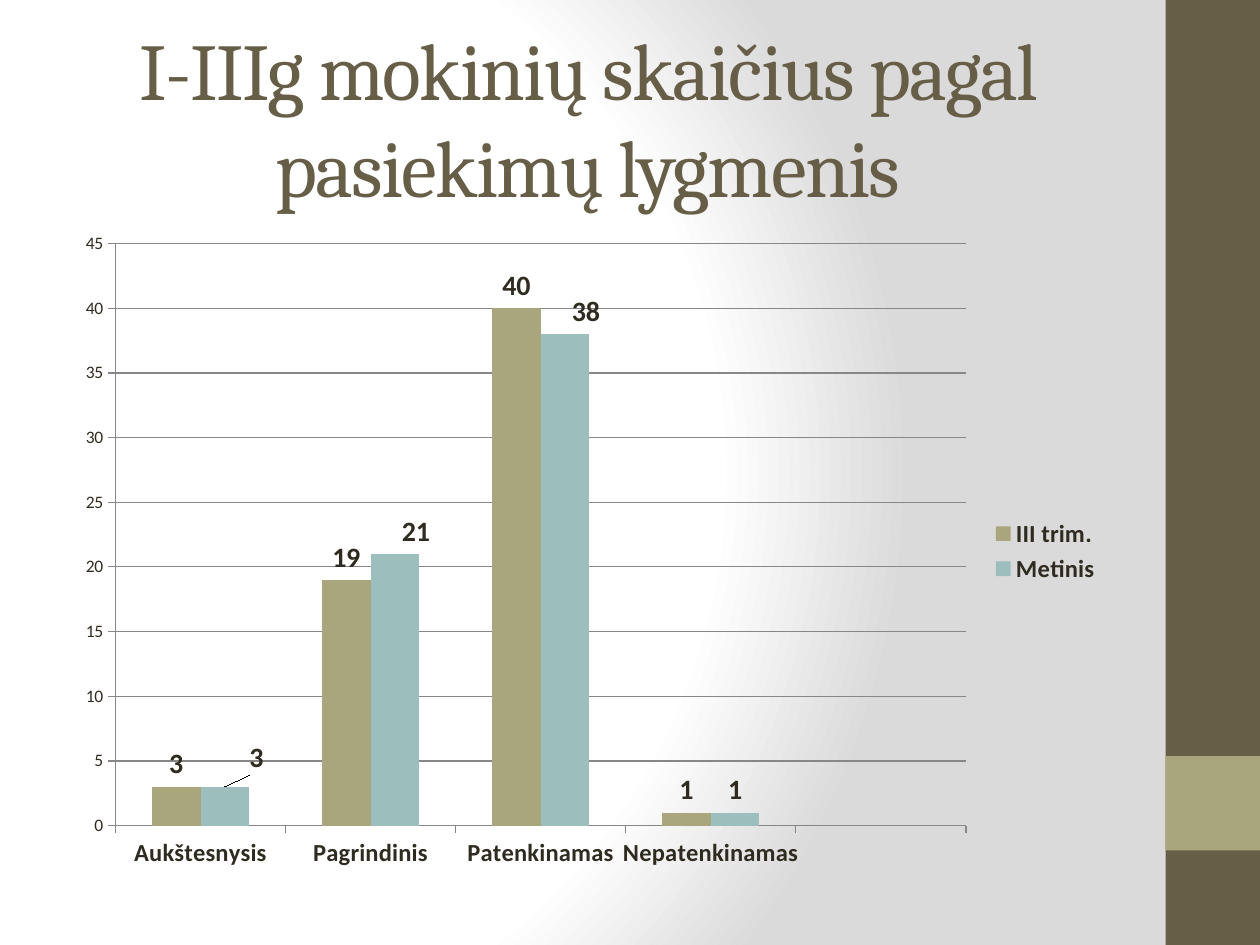
from lxml.etree import SubElement
from pptx import Presentation
from pptx.chart.data import CategoryChartData
from pptx.dml.color import RGBColor
from pptx.enum.chart import XL_CHART_TYPE as ChartType, XL_LABEL_POSITION as LabelPos
from pptx.enum.chart import XL_LEGEND_POSITION as LegendPos, XL_TICK_MARK as Tick
from pptx.enum.shapes import MSO_SHAPE as Shape
from pptx.enum.text import MSO_ANCHOR as Anchor, MSO_AUTO_SIZE as AutoSize, PP_ALIGN as Align
from pptx.oxml import parse_xml
from pptx.oxml.ns import nsdecls, qn
from pptx.util import Pt

# Content
TITLE = "I-IIIg mokinių skaičius pagal pasiekimų lygmenis"
LEVELS = ["Aukštesnysis", "Pagrindinis", "Patenkinamas", "Nepatenkinamas", ""]
PERIODS = {
    "III trim.": [3, 19, 40, 1, None],
    "Metinis": [3, 21, 38, 1, None],
}
# Label shifts in the yearly series, as shares of the chart: point -> (x, y)
LABEL_SHIFTS = {0: (0.03, -0.01), 1: (0.02, 0), 2: (0.02, 0)}

THEME = {
    "brown": "675E47", "olive": "A9A57C", "teal": "9CBEBD",
    "text": "2F2B20", "line": "878787",
    "heading": "Cambria", "body": "Calibri",
    "title": 46, "label": 16, "legend": 14, "axis": 10,
}
BACKDROP = [(0, "FFFFFF"), (75, "FFFFFF"), (100, "DADADA")]
WIDTH, HEIGHT, BAND = 720, 540, 54
MARGIN, CONTENT = 36, 600
PLOT = {"x": 0.05, "y": 0.035, "w": 0.81, "h": 0.88}


def color(key):
    return RGBColor.from_string(THEME[key])


def style(font, size, key="text", face="body", bold=False):
    formats = {"size": Pt(THEME[size]), "bold": bold, "name": THEME[face]}
    for attribute, value in formats.items():
        setattr(font, attribute, value)
    font.color.rgb = color(key)


def manual_layout(values, inner=False):
    layout = parse_xml(f"<c:layout {nsdecls('c')}><c:manualLayout/></c:layout>")
    settings = dict(values)
    if inner:
        settings = {"layoutTarget": "inner", "xMode": "edge", "yMode": "edge", **values}
    for tag, value in settings.items():
        SubElement(layout[0], qn(f"c:{tag}")).set("val", str(value))
    return layout


def paint_background(slide):
    stops = "".join(
        f'<a:gs pos="{share * 1000}"><a:srgbClr val="{tone}"/></a:gs>'
        for share, tone in BACKDROP)
    slide.element.cSld.insert(0, parse_xml(
        f"<p:bg {nsdecls('p', 'a')}><p:bgPr><a:gradFill rotWithShape='1'>"
        f"<a:gsLst>{stops}</a:gsLst><a:path path='circle'>"
        "<a:fillToRect l='20000' t='50000' r='100000' b='50000'/></a:path>"
        "</a:gradFill><a:effectLst/></p:bgPr></p:bg>"))


def add_band(slide, top, height, key):
    band = slide.shapes.add_shape(
        Shape.RECTANGLE, Pt(WIDTH - BAND), Pt(top), Pt(BAND), Pt(height))
    band.shadow.inherit = False
    band.fill.solid()
    band.fill.fore_color.rgb = color(key)
    band.line.fill.background()


def set_title(slide):
    title = slide.shapes.title
    place = {"left": MARGIN, "top": 21.6, "width": CONTENT, "height": 90}
    for attribute, value in place.items():
        setattr(title, attribute, Pt(value))
    frame = title.text_frame
    frame.text = TITLE
    frame.word_wrap = True
    frame.auto_size = AutoSize.NONE
    frame.vertical_anchor = Anchor.MIDDLE
    heading = frame.paragraphs[0]
    heading.alignment = Align.CENTER
    run = heading.runs[0]
    style(run.font, "title", "brown", "heading")
    run.font._element.set("spc", "-100")


def add_level_chart(slide):
    data = CategoryChartData()
    data.categories = LEVELS
    for period, counts in PERIODS.items():
        data.add_series(period, counts)
    chart = slide.shapes.add_chart(
        ChartType.COLUMN_CLUSTERED, Pt(MARGIN), Pt(126), Pt(CONTENT), Pt(378), data).chart
    chart.has_title = False
    style(chart.font, "axis")

    # Plot area and legend
    area = chart.plots[0]._element.getparent()
    for layout in area.findall(qn("c:layout")):
        area.remove(layout)
    area.insert(0, manual_layout(PLOT, inner=True))
    chart.has_legend = True
    chart.legend.position = LegendPos.RIGHT
    chart.legend.include_in_layout = False
    style(chart.legend.font, "legend", bold=True)

    # Axes
    levels, counts = chart.category_axis, chart.value_axis
    style(levels.tick_labels.font, "legend", bold=True)
    style(counts.tick_labels.font, "axis")
    counts.minimum_scale, counts.maximum_scale, counts.major_unit = 0, 45, 5
    counts.has_major_gridlines = True
    for axis in (levels, counts):
        axis.major_tick_mark = Tick.OUTSIDE
        axis.minor_tick_mark = Tick.NONE
    for rule in (levels.format, counts.format, counts.major_gridlines.format):
        rule.line.color.rgb = color("line")
        rule.line.width = Pt(0.75)

    # Columns and their labels
    plot = chart.plots[0]
    plot.gap_width = 150
    plot.vary_by_categories = False
    for series, key in zip(plot.series, ("olive", "teal")):
        series.format.fill.solid()
        series.format.fill.fore_color.rgb = color(key)
        series.data_labels.show_value = True
        series.data_labels.position = LabelPos.OUTSIDE_END
        style(series.data_labels.font, "label", bold=True)
    yearly = plot.series[1]
    for point in LABEL_SHIFTS:
        label = yearly.points[point].data_label
        style(label.font, "label", bold=True)
        label.position = LabelPos.OUTSIDE_END
    shifted = yearly.data_labels._element.findall(qn("c:dLbl"))
    for label, (x, y) in zip(shifted, LABEL_SHIFTS.values()):
        label.insert(1, manual_layout({"x": x, "y": y}))


def main():
    deck = Presentation()
    deck.slide_width, deck.slide_height = Pt(WIDTH), Pt(HEIGHT)
    slide = deck.slides.add_slide(deck.slide_layouts[5])
    paint_background(slide)
    add_band(slide, 0, HEIGHT, "brown")
    add_band(slide, 432, BAND, "olive")
    set_title(slide)
    add_level_chart(slide)
    deck.save("out.pptx")


if __name__ == "__main__":
    main()
